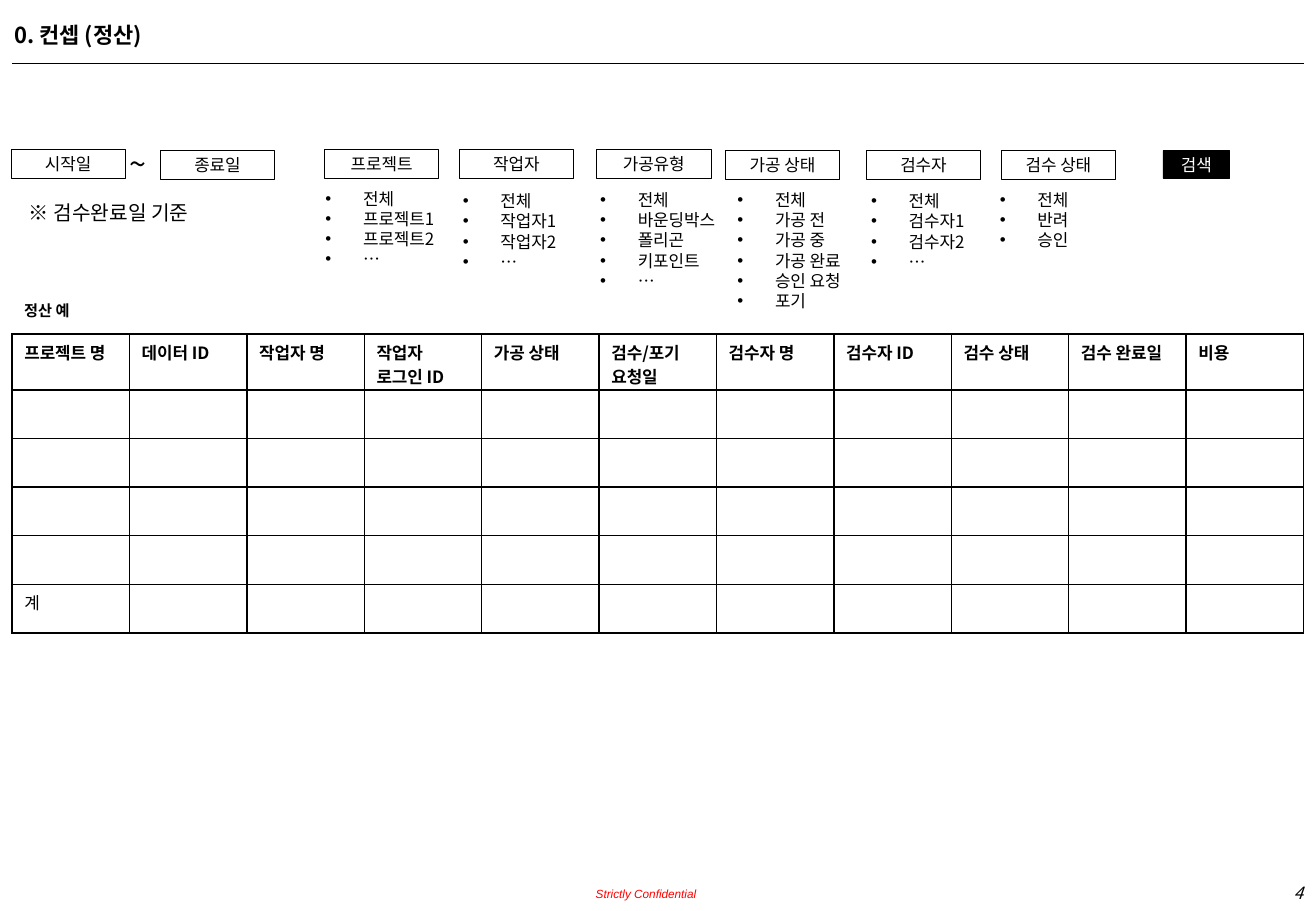
import pptx
import pptx.util
import pptx.dml.color
import pptx.enum.shapes
import pptx.enum.text
import pptx.oxml
import pptx.oxml.ns
from lxml import etree

PX = 9144  # 100 px to the inch
FONT = "Noto Sans CJK KR"
BLACK = pptx.dml.color.RGBColor(0, 0, 0)
WHITE = pptx.dml.color.RGBColor(255, 255, 255)
RED = pptx.dml.color.RGBColor(255, 0, 0)
ALIGN = pptx.enum.text.PP_ALIGN
ANCHOR = pptx.enum.text.MSO_ANCHOR

BOX_W, BOX_H = 94, 24
DATES = [("시작일", 9, 123), ("종료일", 132, 124)]
# label, box left, box top, list left, list top, list width, options
FILTERS = [
    ("프로젝트", 267, 123, 258, 150, 116, ["전체", "프로젝트1", "프로젝트2", "…"]),
    ("작업자", 378, 123, 371, 152, 102, ["전체", "작업자1", "작업자2", "…"]),
    ("가공유형", 491, 123, 484, 151, 122,
     ["전체", "바운딩박스", "폴리곤", "키포인트", "…"]),
    ("가공 상태", 597, 124, 597, 151, 113,
     ["전체", "가공 전", "가공 중", "가공 완료", "승인 요청", "포기"]),
    ("검수자", 713, 124, 707, 152, 102, ["전체", "검수자1", "검수자2", "…"]),
    ("검수 상태", 824, 124, 813, 151, 80, ["전체", "반려", "승인"]),
]
HEADERS = ["프로젝트 명", "데이터 ID", "작업자 명", "작업자 로그인 ID", "가공 상태",
           "검수/포기 요청일", "검수자 명", "검수자 ID", "검수 상태", "검수 완료일", "비용"]
ROWS = 6
HEADER_H = 46


def px(*lengths):
    return [pptx.util.Emu(n * PX) for n in lengths]


def style(tf, size, color=BLACK, bold=False, italic=False, font=FONT,
          align=ALIGN.LEFT):
    for p in tf.paragraphs:
        p.alignment = align
        for r in p.runs:
            r.font.size = pptx.util.Pt(size)
            r.font.bold, r.font.italic = bold, italic
            r.font.color.rgb = color
            r.font.name = font
            ea = etree.SubElement(r.font._element, pptx.oxml.ns.qn("a:ea"))
            ea.set("typeface", font)


def add_text(s, box, text, size, wrap=False, **look):
    tf = s.shapes.add_textbox(*px(*box)).text_frame
    tf.text = text
    tf.word_wrap = wrap
    style(tf, size, **look)
    return tf


def add_box(s, box, label, filled=False):
    sp = s.shapes.add_shape(pptx.enum.shapes.MSO_SHAPE.RECTANGLE, *px(*box))
    sp.shadow.inherit = False
    if filled:
        sp.fill.solid()
        sp.fill.fore_color.rgb = BLACK
    else:
        sp.fill.background()
    sp.line.color.rgb = BLACK
    sp.line.width = pptx.util.Pt(0.25)
    tf = sp.text_frame
    tf.text = label
    tf.vertical_anchor = ANCHOR.MIDDLE
    style(tf, 10, WHITE if filled else BLACK, align=ALIGN.CENTER)


def add_options(s, left, top, width, options):
    tf = add_text(s, (left, top, width, 10 + 17 * len(options)), "\n".join(options), 10)
    for p in tf.paragraphs:
        pPr = p._p.get_or_add_pPr()
        pPr.set("marL", str(31 * PX))
        pPr.set("indent", str(-31 * PX))
        bullet_font = etree.SubElement(pPr, pptx.oxml.ns.qn("a:buFont"))
        bullet_font.set("typeface", "Arial")
        etree.SubElement(pPr, pptx.oxml.ns.qn("a:buChar")).set("char", "•")


def add_heading(s, box):
    """Title with the rule below it."""
    left, top, width, height = box
    title = s.shapes.title
    title.left, title.top, title.width, title.height = px(left, top, width, height)
    tf = title.text_frame
    tf.text = "0. 컨셉 (정산)"
    tf.vertical_anchor = ANCHOR.TOP
    tf.auto_size = pptx.enum.text.MSO_AUTO_SIZE.NONE
    style(tf, 13, bold=True)
    rule_y = top + 39
    line = s.shapes.add_connector(pptx.enum.shapes.MSO_CONNECTOR.STRAIGHT,
                                  *px(left + 8, rule_y, left + 1071, rule_y))
    line.line.color.rgb = BLACK
    line.line.width = pptx.util.Pt(0.75)
    etree.SubElement(line._element.spPr, pptx.oxml.ns.qn("a:effectLst"))


def add_search_bar(s):
    for label, left, top in DATES:
        add_box(s, (left, top, BOX_W, BOX_H), label)
    add_text(s, (97, 115, 38, 40), "~", 18)
    add_text(s, (14, 160, 163, 30), "※ 검수완료일 기준", 12)
    for label, left, top, list_left, list_top, list_width, options in FILTERS:
        add_box(s, (left, top, BOX_W, BOX_H), label)
        add_options(s, list_left, list_top, list_width, options)
    add_box(s, (957, 124, 55, 23), "검색", filled=True)


def add_borders(cell):
    tcPr = cell._tc.get_or_add_tcPr()
    for side in "LRTB":
        tcPr.append(pptx.oxml.parse_xml(
            f'<a:ln{side} {pptx.oxml.ns.nsdecls("a")} w="12700"><a:solidFill>'
            f'<a:srgbClr val="{BLACK}"/></a:solidFill></a:ln{side}>'))


def add_settlement(s, box):
    """Settlement table with its caption above."""
    left, top, width, height = box
    add_text(s, (left, top - 32, 62, 25), "정산 예", 9, bold=True)
    table = s.shapes.add_table(ROWS, len(HEADERS), *px(*box)).table
    table.first_row = table.horz_banding = False
    for col in table.columns:
        col.width = pptx.util.Emu(width * PX // len(HEADERS))
    for i, row in enumerate(table.rows):
        row_h = (height - HEADER_H) // (ROWS - 1) if i else HEADER_H
        row.height = pptx.util.Emu(row_h * PX)
    for cell in table.iter_cells():
        cell.margin_bottom = 0
        add_borders(cell)
        cell.fill.background()
    for i, header in enumerate(HEADERS):
        cell = table.cell(0, i)
        cell.text = header
        style(cell.text_frame, 10, bold=True)
    total = table.cell(ROWS - 1, 0)
    total.text = "계"
    style(total.text_frame, 10)


def add_footer(s):
    tf = add_text(s, (420, 718, 153, 24), "Strictly Confidential", 7, wrap=True,
                  color=RED, italic=True, font="Arial", align=ALIGN.RIGHT)
    tf.margin_left = tf.margin_top = tf.margin_right = tf.margin_bottom = 0
    tf.vertical_anchor = ANCHOR.BOTTOM
    add_text(s, (915, 722, 167, 27), "4", 10, wrap=True, italic=True, align=ALIGN.RIGHT)


def main():
    prs = pptx.Presentation()
    prs.slide_width, prs.slide_height = px(1083, 750)
    s = prs.slides.add_slide(prs.slide_layouts[5])
    add_heading(s, (2, 13, 1052, 32))
    add_search_bar(s)
    add_settlement(s, (10, 275, 1063, 246))
    add_footer(s)
    prs.save("out.pptx")


if __name__ == "__main__":
    main()
